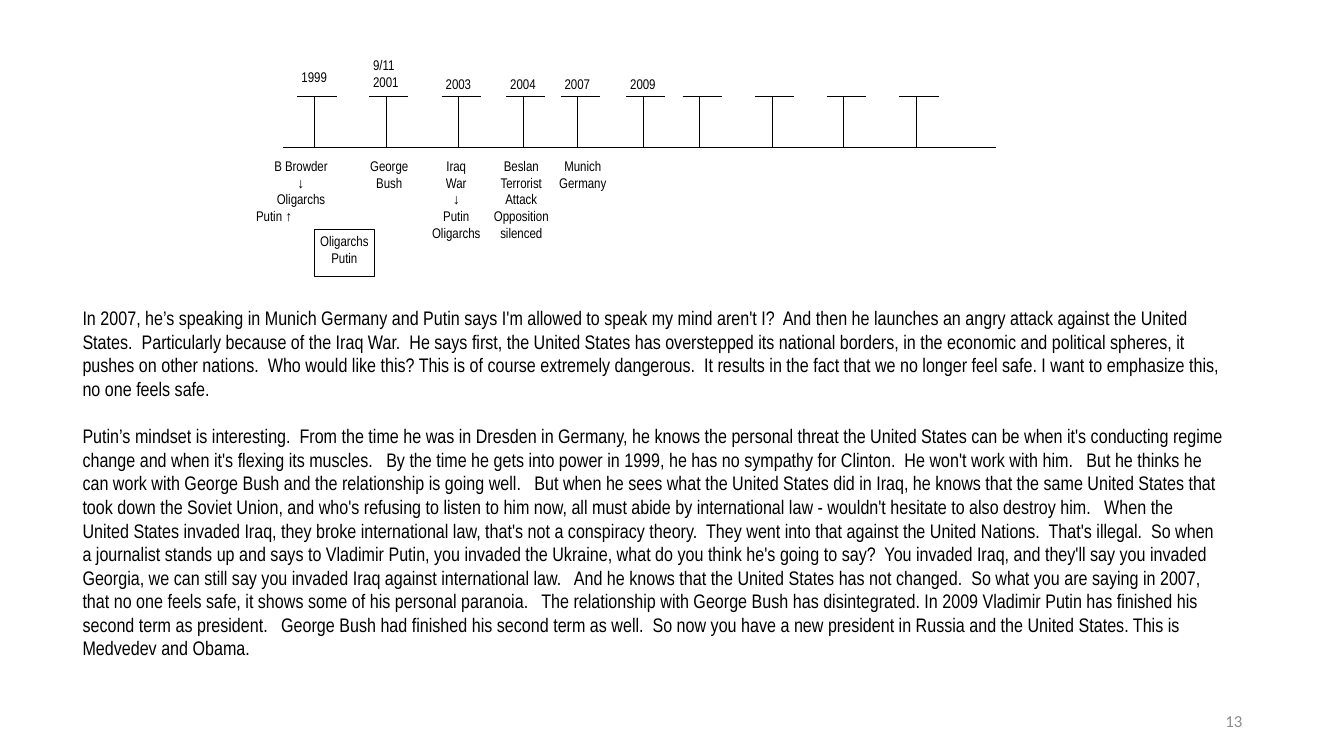
from collections import namedtuple
from dataclasses import dataclass

from lxml.etree import SubElement
from pptx import Presentation
from pptx.dml.color import RGBColor
from pptx.enum.shapes import MSO_CONNECTOR, MSO_SHAPE
from pptx.enum.text import MSO_ANCHOR, PP_ALIGN
from pptx.oxml.ns import qn
from pptx.util import Inches, Pt


@dataclass(frozen=True)
class Theme:
    ink: RGBColor = RGBColor(0, 0, 0)
    gray: RGBColor = RGBColor(0x8C, 0x8C, 0x8C)
    main: str = "Arial Narrow"
    foot: str = "Calibri"
    label: int = 10
    page: int = 12
    body: int = 14
    rule: float = 0.75
    frame: float = 0.25


THEME = Theme()
Box = namedtuple("Box", "left top width height")
Mark = namedtuple("Mark", "stem year rise note left width height",
                  defaults=("", 0, "", 0, 0, 0))

# Places are measured from the top left corner of the timeline.
MARKS = [
    Mark(0.62, "1999", 0.12, "B Browder\n↓\nOligarchs\nPutin ↑", 0, 0.97, 0.75),
    Mark(1.33, "9/11\n2001", 0, "George\nBush", 1, 0.72, 0.56),
    Mark(2.05, "2003", 0.19, "Iraq\nWar\n↓\nPutin\nOligarchs", 1.72, 0.61, 1),
    Mark(2.69, "2004", 0.19, "Beslan\nTerrorist\nAttack\nOpposition\nsilenced", 2.31, 0.72, 1),
    Mark(3.23, "2007", 0.19, "Munich\nGermany", 3, 0.56, 0.5),
    Mark(3.88, "2009", 0.19),
    Mark(4.44), Mark(5.16), Mark(5.87), Mark(6.59),
]

# Each paragraph is a list of passages that run on from one another.
BODY = [
    [
        "In 2007, he’s speaking in Munich Germany and Putin says I'm allowed to speak my mind "
        "aren't I?  And then he launches an angry attack against the United States.  "
        "Particularly because of the Iraq War.  He says first, the United States has "
        "overstepped its national borders, in the economic and political spheres, it pushes "
        "on other nations.  Who would like this? This is of course extremely dangerous.  It "
        "results in the fact that we no longer feel safe. I want to emphasize this, no one "
        "feels safe.",
    ],
    [
        "Putin’s mindset is interesting.  From the time he was in Dresden in Germany, he knows "
        "the personal threat the United States can be when it's conducting regime change and "
        "when it's flexing its muscles.   By the time he gets into power in 1999, he has no "
        "sympathy for Clinton.  He won't work with him.   But he thinks he can work with "
        "George Bush and the relationship is going well.   ",
        "But when he sees what the United States did in Iraq, he knows that the same United "
        "States that took down the Soviet Union, and who's refusing to listen to him now, all "
        "must abide by international law - wouldn't hesitate to also destroy him.   When the "
        "United States invaded Iraq, they broke international law, that's not a conspiracy "
        "theory.  They went into that against the United Nations.  That's illegal.  ",
        "So when a journalist stands up and says to Vladimir Putin, you invaded the Ukraine, "
        "what do you think he's going to say?  You invaded Iraq, and they'll say you invaded "
        "Georgia, we can still say you invaded Iraq against international law.   And he knows "
        "that the United States has not changed.  So what you are saying in 2007, that no one "
        "feels safe, it shows some of his personal paranoia.   ",
        "The relationship with George Bush has disintegrated. In 2009 Vladimir Putin has "
        "finished his second term as president.   George Bush had finished his second term as "
        "well.  So now you have a new president in Russia and the United States. This is "
        "Medvedev and Obama.",
    ],
]


def inches(box):
    return [Inches(n) for n in box]


def write(shape, lines, size, align=PP_ALIGN.LEFT, font=THEME.main,
          color=THEME.ink, pad=None, gap=0, anchor=MSO_ANCHOR.TOP):
    """Fill a shape with one paragraph per line; gap is the space between them."""
    frame = shape.text_frame
    look = {"word_wrap": True, "vertical_anchor": anchor}
    if pad is not None:
        sides = ("left", "top", "right", "bottom")
        look |= {f"margin_{side}": Inches(pad) for side in sides}
    for name, value in look.items():
        setattr(frame, name, value)
    for i, line in enumerate(lines):
        para = frame.paragraphs[0] if i == 0 else frame.add_paragraph()
        para.alignment = align
        para.space_before = Pt(gap if i else 0)
        run = para.add_run()
        run.text = line
        for name, value in {"name": font, "size": Pt(size)}.items():
            setattr(run.font, name, value)
        run.font.color.rgb = color
    return frame


def label(shapes, box, text, align=PP_ALIGN.LEFT):
    item = shapes.add_textbox(*inches(box))
    return write(item, text.split("\n"), THEME.label, align, pad=0.04)


def rule(shapes, *ends):
    line = shapes.add_connector(MSO_CONNECTOR.STRAIGHT, *inches(ends))
    line.line.color.rgb = THEME.ink
    line.line.width = Pt(THEME.rule)
    SubElement(line._element.spPr, qn("a:effectLst"))


def framed(shapes, box, text):
    item = shapes.add_shape(MSO_SHAPE.RECTANGLE, *inches(box))
    item.shadow.inherit = False
    item.fill.background()
    item.line.color.rgb = THEME.ink
    item.line.width = Pt(THEME.frame)
    write(item, text.split("\n"), THEME.label, PP_ALIGN.CENTER, pad=0.04)


def timeline(slide, box):
    shapes = slide.shapes.add_group_shape().shapes
    cap, axis, notes = (box.top + drop for drop in (0.44, 0.94, 1))
    rule(shapes, box.left + 0.31, axis, box.left + box.width, axis)
    for mark in MARKS:
        stem = box.left + mark.stem
        start, wide = stem - 0.17, 0.39
        rule(shapes, stem, cap, stem, axis)
        rule(shapes, start, cap, start + wide, cap)
        if mark.year:
            label(shapes, Box(start, box.top + mark.rise, wide, 0.5 - mark.rise), mark.year)
        if mark.note:
            place = Box(box.left + mark.left, notes, mark.width, mark.height)
            frame = label(shapes, place, mark.note, PP_ALIGN.CENTER)
            if mark.note.endswith("↑"):
                frame.paragraphs[-1].alignment = PP_ALIGN.LEFT
    framed(shapes, Box(box.left + 0.62, box.top + 1.75, 0.59, 0.47), "Oligarchs\nPutin")


def story(slide, box):
    lines = ["".join(parts) for parts in BODY]
    write(slide.shapes.add_textbox(*inches(box)), lines, THEME.body, gap=17)


def footer(slide, box):
    write(slide.shapes.add_textbox(*inches(box)), ["13"], THEME.page, PP_ALIGN.RIGHT,
          THEME.foot, THEME.gray, anchor=MSO_ANCHOR.MIDDLE)


def main():
    deck = Presentation()
    deck.slide_width, deck.slide_height = Inches(13.33), Inches(7.5)
    slide = deck.slides.add_slide(deck.slide_layouts[6])
    footer(slide, Box(9.42, 6.95, 3, 0.4))
    timeline(slide, Box(2.5, 0.52, 7.38, 2.22))
    story(slide, Box(0.72, 2.99, 11.52, 3.9))
    deck.save("out.pptx")


if __name__ == "__main__":
    main()
